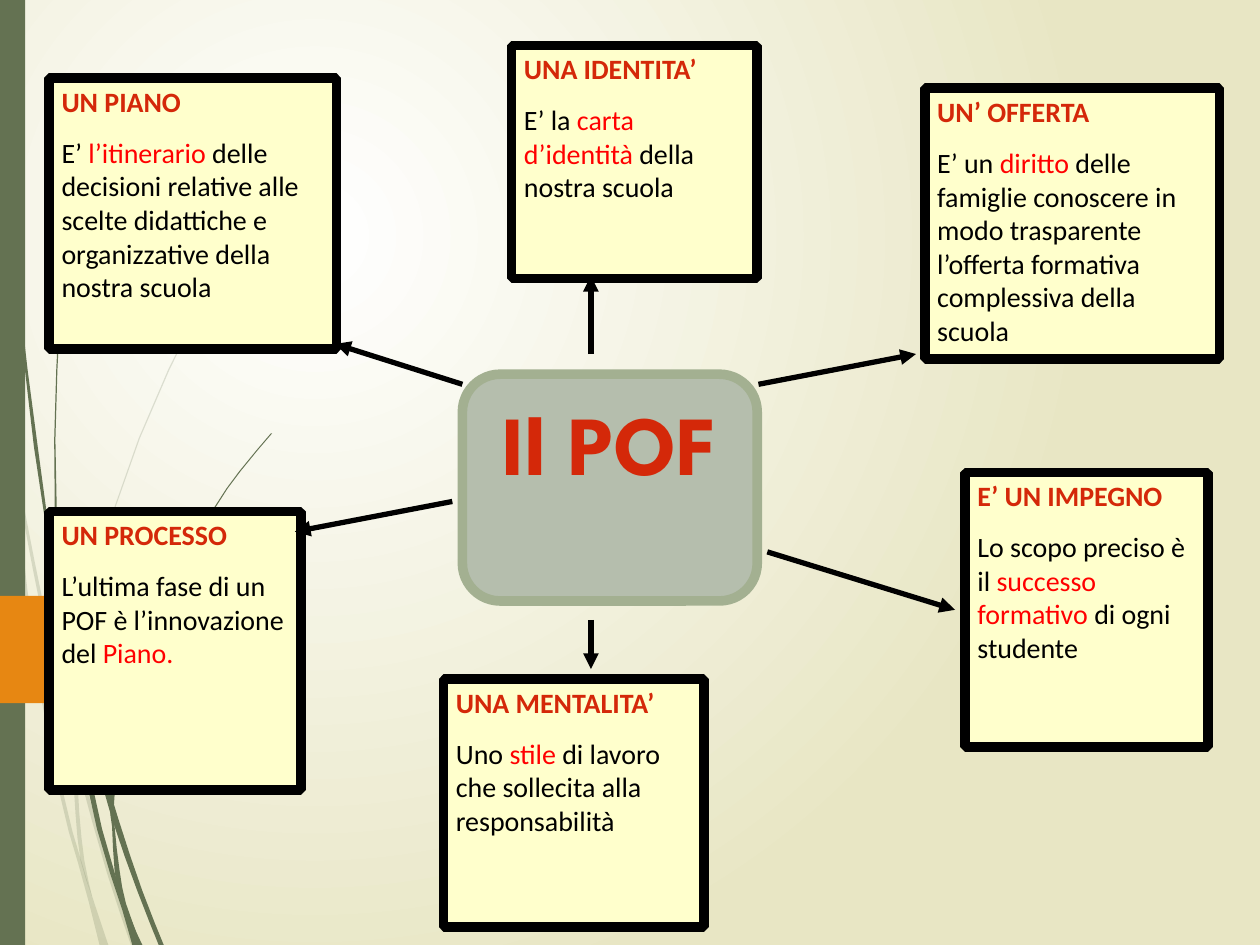
from dataclasses import dataclass

import pptx
import pptx.dml.color
import pptx.enum.shapes
import pptx.enum.text
import pptx.oxml
import pptx.oxml.ns
import pptx.util
from lxml import etree

# The slide is a grid of 10 columns by 7.5 rows with square cells
COLUMNS, ROWS = 10, 7.5
CELL = pptx.util.Inches(1)
SHAPES = pptx.enum.shapes.MSO_SHAPE
GREEN, ORANGE, CREAM, BLACK = "647252", "E78712", "FFFFCC", "000000"
HEADING, ACCENT = "D42809", "FF0000"
BORDER = 5.5
STEPS = 2  # curve samples between two rows of a stem


@dataclass
class Card:
    area: tuple[float, float, float, float]
    heading: str
    before: str
    accent: str
    after: str = ""


@dataclass
class Stem:
    rows: list[tuple[float, float, float]]  # row, left edge, right edge
    opacity: int = 100


@dataclass
class Arrow:
    start: tuple[float, float]
    end: tuple[float, float]


CARDS = [
    Card((0.39, 0.62, 2.28, 2.15), "UN PIANO", "E’", " l’itinerario",
         " delle decisioni relative alle scelte didattiche e organizzative della nostra scuola"),
    Card((7.34, 0.7, 2.34, 2.15), "UN’ OFFERTA", "E’ un", " diritto",
         " delle famiglie conoscere in modo trasparente l’offerta formativa complessiva della scuola"),
    Card((0.39, 4.06, 2, 2.21), "UN PROCESSO",
         "L’ultima fase di un POF è l’innovazione del ", "Piano."),
    Card((7.66, 3.75, 1.93, 2.18), "E’ UN IMPEGNO", "Lo scopo preciso è il",
         " successo formativo", " di ogni studente"),
    Card((3.52, 5.39, 2.07, 1.97), "UNA MENTALITA’", "Uno", " stile",
         " di lavoro che sollecita alla responsabilità"),
    Card((4.06, 0.36, 1.95, 1.85), "UNA IDENTITA’", "E’ la ", "carta d’identità",
         " della nostra scuola"),
]

ARROWS = [
    Arrow((4.69, 2.81), (4.69, 2.19)),
    Arrow((6.09, 4.38), (7.58, 4.84)),
    Arrow((3.67, 3.05), (2.66, 2.73)),
    Arrow((6.02, 3.05), (7.27, 2.81)),
    Arrow((3.59, 3.98), (2.34, 4.22)),
    Arrow((4.69, 4.92), (4.69, 5.31)),
]

STEMS = [
    Stem([(2.82, 0, 0), (2.99, 0, 0.02), (3.5, 0.07, 0.08), (3.76, 0.1, 0.12),
          (4.7, 0.19, 0.22), (6.2, 0.45, 0.48), (6.85, 0.62, 0.65),
          (7.14, 0.7, 0.74), (7.5, 0.79, 0.86)], 20),
    Stem([(3.45, 0.1, 0.1), (3.76, 0.12, 0.14), (5.21, 0.4, 0.43), (6.07, 0.61, 0.64),
          (6.93, 0.85, 0.88), (7.5, 1.04, 1.08)], 20),
    Stem([(5.99, 0.58, 0.58), (6.1, 0.58, 0.61), (6.46, 0.6, 0.63),
          (6.83, 0.64, 0.67), (7.11, 0.73, 0.73)], 20),
    Stem([(1.53, 2.17, 2.17), (1.75, 2.01, 2.01), (2.44, 1.58, 1.59), (3.48, 1.1, 1.11),
          (4.61, 0.75, 0.76), (5.84, 0.59, 0.61), (5.96, 0.61, 0.61)], 20),
    Stem([(0, 0.02, 0.03), (1.1, 0.05, 0.06), (2.33, 0.14, 0.15), (3.55, 0.27, 0.3),
          (4.77, 0.46, 0.47), (5.05, 0.5, 0.53), (5.57, 0.56, 0.6), (6.58, 0.77, 0.81),
          (7.22, 0.97, 1.01), (7.5, 1.05, 1.13)]),
    Stem([(4.72, 0.5, 0.5), (5.05, 0.53, 0.56), (5.91, 0.73, 0.77), (6.5, 0.89, 0.94),
          (7.07, 1.09, 1.13), (7.5, 1.26, 1.3)]),
    Stem([(1.41, 0.58, 0.58), (1.93, 0.51, 0.52), (2.45, 0.47, 0.48), (3.49, 0.43, 0.44),
          (4.5, 0.45, 0.47), (4.72, 0.49, 0.5)]),
    Stem([(3.44, 2.15, 2.16), (3.74, 1.9, 1.91), (4.06, 1.68, 1.69), (4.75, 1.29, 1.31),
          (5.51, 1.01, 1.03), (6.31, 0.88, 0.91), (6.56, 0.89, 0.91), (6.91, 0.91, 0.95),
          (7.17, 0.96, 1), (7.5, 1.08, 1.12)]),
]


def color(value: str) -> pptx.dml.color.RGBColor:
    return pptx.dml.color.RGBColor.from_string(value)


def add_element(parent, tag: str, **attributes: str):
    return etree.SubElement(parent, pptx.oxml.ns.qn(tag), attributes)


def paint(shape, fill: str, border: str | None = None) -> None:
    shape.shadow.inherit = False
    shape.fill.solid()
    shape.fill.fore_color.rgb = color(fill)
    if border:
        shape.line.color.rgb = color(border)
        shape.line.width = pptx.util.Pt(BORDER)
    else:
        shape.line.fill.background()


def add_block(slide, kind, area: tuple, fill: str, border: str | None = None):
    shape = slide.shapes.add_shape(kind, *(int(length * CELL) for length in area))
    paint(shape, fill, border)
    return shape


def format_run(run, size: float, font: str, value: str, bold: bool = False) -> None:
    run.font.size = pptx.util.Pt(size)
    run.font.name = font
    run.font.bold = bold
    run.font.color.rgb = color(value)


def format_paragraph(paragraph, alignment) -> None:
    paragraph.alignment = alignment
    paragraph.space_after = pptx.util.Pt(10)


def smooth(rows: list) -> list:
    """Catmull-Rom curve through the rows of a stem."""
    padded = [rows[0], *rows, rows[-1]]
    curve = []
    for a, b, c, d in zip(padded, padded[1:], padded[2:], padded[3:]):
        for step in range(STEPS):
            t = step / STEPS
            curve.append(tuple(
                q + t / 2 * (r - p + t * (2 * p - 5 * q + 4 * r - s
                                          + t * (3 * (q - r) + s - p)))
                for p, q, r, s in zip(a, b, c, d)))
    return [*curve, rows[-1]]


def add_stem(slide, stem: Stem) -> None:
    curve = smooth(stem.rows)
    outline = [(left * CELL, y * CELL) for y, left, _ in curve]
    outline += [(right * CELL, y * CELL) for y, _, right in reversed(curve)]
    builder = slide.shapes.build_freeform(*outline[0])
    builder.add_line_segments(outline[1:], close=True)
    shape = builder.convert_to_shape()
    paint(shape, GREEN)
    if stem.opacity < 100:
        tint = shape.fill._xPr.find(".//" + pptx.oxml.ns.qn("a:srgbClr"))
        add_element(tint, "a:alpha", val=str(stem.opacity * 1000))


def add_card(slide, card: Card) -> None:
    shape = add_block(slide, SHAPES.RECTANGLE, card.area, CREAM, BLACK)
    add_element(shape.line._get_or_add_ln(), "a:bevel")
    text_frame = shape.text_frame
    text_frame.word_wrap = True
    text_frame.vertical_anchor = pptx.enum.text.MSO_ANCHOR.TOP
    text_frame.text = card.heading
    heading, body = text_frame.paragraphs[0], text_frame.add_paragraph()
    for paragraph in (heading, body):
        format_paragraph(paragraph, pptx.enum.text.PP_ALIGN.LEFT)
    format_run(heading.runs[0], 16, "Calibri", HEADING, bold=True)
    for text, value in ((card.before, BLACK), (card.accent, ACCENT), (card.after, BLACK)):
        if text:
            run = body.add_run()
            run.text = text
            format_run(run, 16, "Calibri", value)


def add_arrow(slide, arrow: Arrow) -> None:
    ends = (int(length * CELL) for length in (*arrow.start, *arrow.end))
    connector = slide.shapes.add_connector(pptx.enum.shapes.MSO_CONNECTOR.STRAIGHT, *ends)
    connector.line.color.rgb = color(BLACK)
    connector.line.width = pptx.util.Pt(3)
    add_element(connector.line._get_or_add_ln(), "a:tailEnd", type="triangle")
    add_element(connector._element.spPr, "a:effectLst")


def set_background(slide) -> None:
    fill = slide.background.fill
    fill.gradient()
    for stop, value in zip(fill.gradient_stops, ("FFFFFF", "E8E6C4")):
        stop.color.rgb = color(value)
    gradient = slide._element.find(".//" + pptx.oxml.ns.qn("a:gradFill"))
    gradient.remove(gradient.find(pptx.oxml.ns.qn("a:lin")))
    circle = add_element(gradient, "a:path", path="circle")
    add_element(circle, "a:fillToRect", l="50000", t="50000", r="100000", b="100000")


def main() -> None:
    presentation = pptx.Presentation()
    presentation.slide_width, presentation.slide_height = COLUMNS * CELL, int(ROWS * CELL)
    slide = presentation.slides.add_slide(presentation.slide_layouts[6])

    # Backdrop: gradient, stems, side band and tag
    set_background(slide)
    for stem in STEMS:
        add_stem(slide, stem)
    add_block(slide, SHAPES.RECTANGLE, (0, 0, 0.2, ROWS), GREEN)
    add_block(slide, SHAPES.PENTAGON, (0, 4.73, 1.5, 0.85), ORANGE)

    # Cards around the centre
    for card in CARDS:
        add_card(slide, card)

    # Centre
    centre = add_block(slide, SHAPES.ROUNDED_RECTANGLE, (3.67, 2.97, 2.34, 1.8),
                       "B5BEAD", "A3B091")
    centre.text_frame.text = "Il POF"
    centre.text_frame.word_wrap = True
    centre.text_frame.vertical_anchor = pptx.enum.text.MSO_ANCHOR.TOP
    paragraph = centre.text_frame.paragraphs[0]
    format_paragraph(paragraph, pptx.enum.text.PP_ALIGN.CENTER)
    format_run(paragraph.runs[0], 48, "League Spartan", HEADING, bold=True)

    # Arrows from the centre to the cards
    for arrow in ARROWS:
        add_arrow(slide, arrow)
    presentation.save("out.pptx")


if __name__ == "__main__":
    main()
